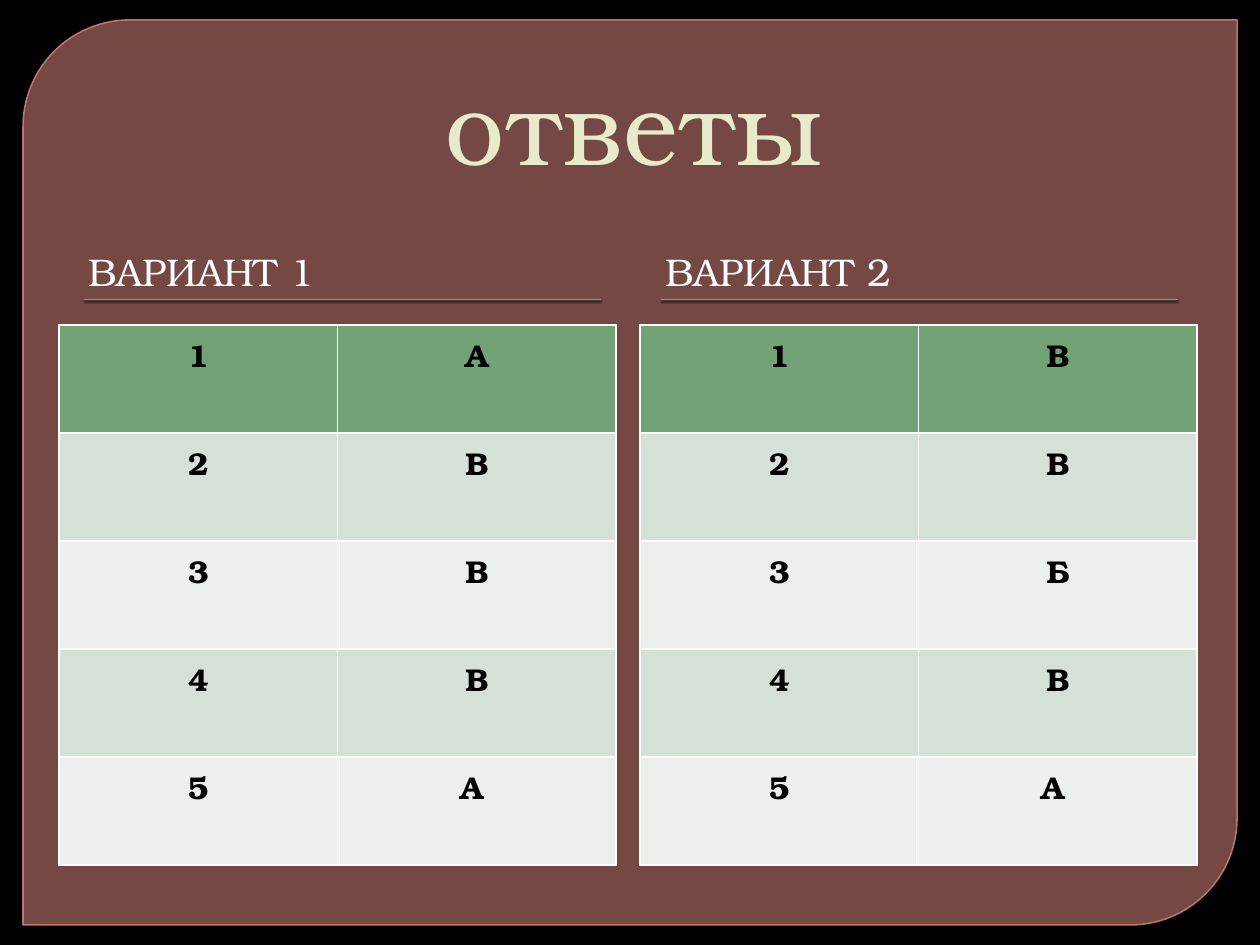
import pptx
import pptx.util
import pptx.dml.color
import pptx.enum.shapes
import pptx.enum.text
import pptx.oxml
import pptx.oxml.ns

SCALE = 914400 / 126
FONT = "TeX Gyre Bonum"
COLORS = {
    "back": "000000", "panel": "B56F68", "edge": "CA817A",
    "title": "E7EACB", "light": "FFFFFF", "dark": "000000",
    "green": "72A376", "band": "D5E0D6", "pale": "EBF0EC",
}
ALIGN = pptx.enum.text.PP_ALIGN
SHAPES = pptx.enum.shapes.MSO_SHAPE


def px(n):
    return pptx.util.Emu(round(n * SCALE))


def box(*sides):
    return [px(n) for n in sides]


def rgb(name):
    return pptx.dml.color.RGBColor.from_string(COLORS[name])


def parse_xml(text):
    return pptx.oxml.parse_xml(text.replace(">", f" {pptx.oxml.ns.nsdecls('a')}>", 1))


def paint(fill, name, alpha=100):
    fill.solid()
    fill.fore_color.rgb = rgb(name)
    if alpha < 100:
        color = fill._xPr.find(".//" + pptx.oxml.ns.qn("a:srgbClr"))
        color.append(parse_xml(f'<a:alpha val="{alpha * 1000}"></a:alpha>'))


def style(para, size, name, bold=False, align=ALIGN.LEFT):
    para.alignment = align
    for run in para.runs:
        run.font.name = FONT
        run.font.size = pptx.util.Pt(size)
        run.font.bold = bold
        run.font.color.rgb = rgb(name)


def add_text(slide, text, x, y, w, h, size, name, indent, align=ALIGN.LEFT):
    frame = slide.shapes.add_textbox(*box(x, y, w, h)).text_frame
    frame.word_wrap = True
    frame.vertical_anchor = pptx.enum.text.MSO_ANCHOR.BOTTOM
    frame.text = text
    para = frame.paragraphs[0]
    style(para, size, name, align=align)
    props = para._p.get_or_add_pPr()
    props.set("marL", str(px(indent)))
    props.set("indent", "0")


def add_panel(slide, x, y, w, h):
    panel = slide.shapes.add_shape(SHAPES.ROUND_2_DIAG_RECTANGLE, *box(x, y, w, h))
    panel.adjustments[0] = 0.118
    panel.adjustments[1] = 0
    panel.shadow.inherit = False
    paint(panel.fill, "panel", 65)
    paint(panel.line.fill, "edge", 88)
    panel.line.width = pptx.util.Pt(0.87)


def add_rule(slide, x, y, w, h):
    rule = slide.shapes.add_shape(SHAPES.RECTANGLE, *box(x, y, w, h))
    rule.shadow.inherit = False
    paint(rule.fill, "green")
    rule.line.fill.background()
    effects = rule._element.spPr.find(pptx.oxml.ns.qn("a:effectLst"))
    effects.append(parse_xml(
        '<a:outerShdw blurRad="12700" dist="12700" dir="5400000" rotWithShape="0">'
        f'<a:srgbClr val="{COLORS["dark"]}"><a:alpha val="75000"/></a:srgbClr>'
        '</a:outerShdw>'))


def add_edges(cell):
    props = cell._tc.get_or_add_tcPr()
    for spot, side in enumerate(("lnL", "lnR", "lnT", "lnB")):
        props.insert(spot, parse_xml(
            f'<a:{side} w="12700"><a:solidFill><a:srgbClr val="{COLORS["light"]}"/>'
            f'</a:solidFill></a:{side}>'))


def add_grid(slide, marks, x, y, w, h):
    table = slide.shapes.add_table(len(marks), 2, *box(x, y, w, h)).table
    for row, mark in enumerate(marks):
        table.rows[row].height = px(h / len(marks))
        name = "green" if row == 0 else "band" if row % 2 else "pale"
        for col, text in enumerate((str(row + 1), mark)):
            cell = table.cell(row, col)
            cell.text_frame.text = text
            style(cell.text_frame.paragraphs[0], 18, "dark", True, ALIGN.CENTER)
            paint(cell.fill, name)
            add_edges(cell)


def add_key(slide, head, marks, x, y, w, h, shift):
    add_rule(slide, x + 21, y + 87, 517, 1)
    add_text(slide, head, x, y, w, 88, 22, "light", 13)
    add_grid(slide, marks, x + shift, y + 113, w, h - 113)


def main():
    deck = pptx.Presentation()
    deck.slide_width, deck.slide_height = box(1260, 945)
    slide = deck.slides.add_slide(deck.slide_layouts[6])
    paint(slide.background.fill, "back")
    add_panel(slide, 23, 20, 1214, 905)
    add_text(slide, "ответы", 63, 35, 1134, 158, 60, "title", 8, ALIGN.CENTER)
    add_key(slide, "ВАРИАНТ 1", ["А", "В", "В", "В", "А "], 63, 212, 557, 653, -4)
    add_key(slide, "ВАРИАНТ 2", ["В", "В", "Б", "В", "А "], 640, 212, 557, 653, 0)
    deck.save("out.pptx")


if __name__ == "__main__":
    main()
